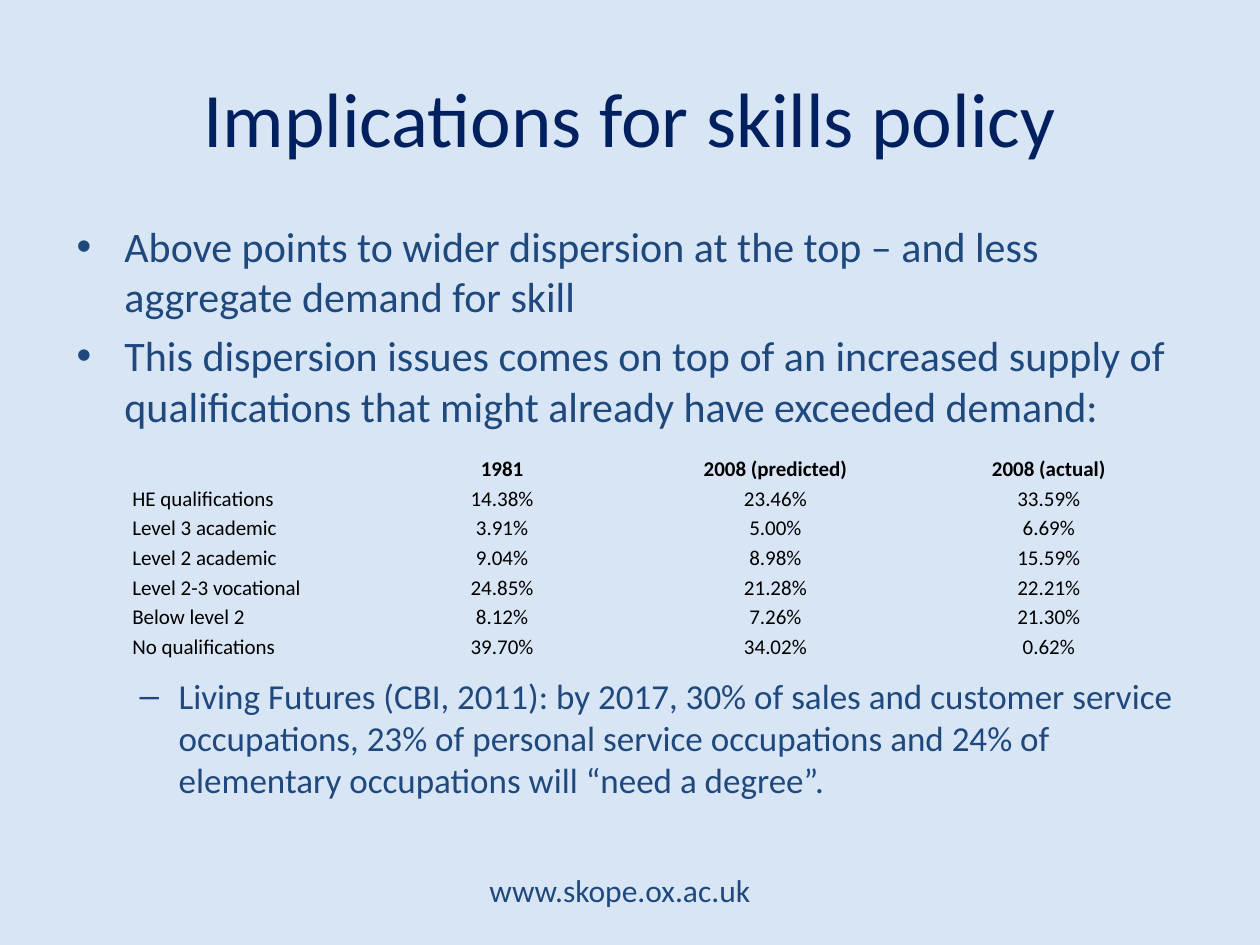
"""Build the slide on implications for skills policy."""
from lxml import etree
from pptx import Presentation
from pptx.dml.color import RGBColor
from pptx.enum import text
from pptx.oxml.ns import qn
from pptx.util import Inches, Pt

BACKGROUND = RGBColor(0xD8, 0xE5, 0xF5)
NAVY = RGBColor(0x00, 0x20, 0x60)
BLUE = RGBColor(0x1F, 0x49, 0x7D)
BLACK = RGBColor(0, 0, 0)
FONT = "Calibri"

TITLE = "Implications for skills policy"
POINTS = [
    "Above points to wider dispersion at the top – and less aggregate demand for skill",
    "This dispersion issues comes on top of an increased supply of qualifications "
    "that might already have exceeded demand:",
]
SUBPOINTS = [
    "Living Futures (CBI, 2011): by 2017, 30% of sales and customer service occupations, "
    "23% of personal service occupations and 24% of elementary occupations will “need a degree”.",
]
FOOTER = "www.skope.ox.ac.uk"
QUALIFICATIONS = [
    ("", "1981", "2008 (predicted)", "2008 (actual)"),
    ("HE qualifications", "14.38%", "23.46%", "33.59%"),
    ("Level 3 academic", "3.91%", "5.00%", "6.69%"),
    ("Level 2 academic", "9.04%", "8.98%", "15.59%"),
    ("Level 2-3 vocational", "24.85%", "21.28%", "22.21%"),
    ("Below level 2", "8.12%", "7.26%", "21.30%"),
    ("No qualifications", "39.70%", "34.02%", "0.62%"),
]
COLUMN_WIDTHS = (1.92, 2.17, 2.17, 2.17)
NO_GRID_STYLE = "{2D5ABB26-0587-4C30-8999-92F81FD0307C}"


def style(para, size, color, bold=False):
    para.font.name = FONT
    para.font.size = Pt(size)
    para.font.color.rgb = color
    para.font.bold = bold


def add_box(page, place, lines, size, color, bullet=None, indent=0, hang=0):
    frame = page.shapes.add_textbox(*map(Inches, place)).text_frame
    frame.word_wrap = True
    frame.vertical_anchor = text.MSO_ANCHOR.TOP if bullet else text.MSO_ANCHOR.MIDDLE
    for index, line in enumerate(lines):
        para = frame.paragraphs[0] if index == 0 else frame.add_paragraph()
        para.text = line
        para.alignment = text.PP_ALIGN.LEFT if bullet else text.PP_ALIGN.CENTER
        if index:
            para.space_before = Pt(size * 0.2)
        if bullet:
            props = para._p.get_or_add_pPr()
            props.set("marL", str(Inches(indent)))
            props.set("indent", str(-Inches(hang)))
            etree.SubElement(props, qn("a:buFont"), typeface="Arial")
            etree.SubElement(props, qn("a:buChar"), char=bullet)
        style(para, size, color)


def add_qualifications(page):
    frame = page.shapes.add_table(
        len(QUALIFICATIONS), len(COLUMN_WIDTHS),
        Inches(0.98), Inches(3.59), Inches(sum(COLUMN_WIDTHS)), Inches(1.65))
    table = frame.table
    table.first_row = table.horz_banding = False
    table._tbl.tblPr.find(qn("a:tableStyleId")).text = NO_GRID_STYLE
    for column, width in zip(table.columns, COLUMN_WIDTHS):
        column.width = Inches(width)
    for row, values in enumerate(QUALIFICATIONS):
        for column, value in enumerate(values):
            cell = table.cell(row, column)
            cell.fill.background()
            cell.vertical_anchor = text.MSO_ANCHOR.BOTTOM
            cell.margin_left = cell.margin_right = Inches(0.07)
            cell.margin_top = cell.margin_bottom = 0
            para = cell.text_frame.paragraphs[0]
            para.alignment = text.PP_ALIGN.CENTER if column else text.PP_ALIGN.LEFT
            para.line_spacing = 1.15
            style(para, 12, BLACK, bold=row == 0)
            if value:
                para.add_run().text = value
            else:
                etree.SubElement(para._p, qn("a:endParaRPr"), sz="1200")


def main():
    deck = Presentation()
    deck.slide_width, deck.slide_height = Inches(10), Inches(7.5)
    page = deck.slides.add_slide(deck.slide_layouts[6])
    page.background.fill.solid()
    page.background.fill.fore_color.rgb = BACKGROUND
    add_box(page, (3.2, 6.86, 3.44, 0.4), [FOOTER], 18, BLUE)
    add_box(page, (0.5, 0.3, 9, 1.25), [TITLE], 44, NAVY)
    add_box(page, (0.51, 1.7, 9, 1.85), POINTS, 24, BLUE, "•", 0.38, 0.38)
    add_box(page, (0.51, 5.3, 9, 1.35), SUBPOINTS, 20, BLUE, "–", 0.81, 0.31)
    add_qualifications(page)
    deck.save("out.pptx")


if __name__ == "__main__":
    main()
